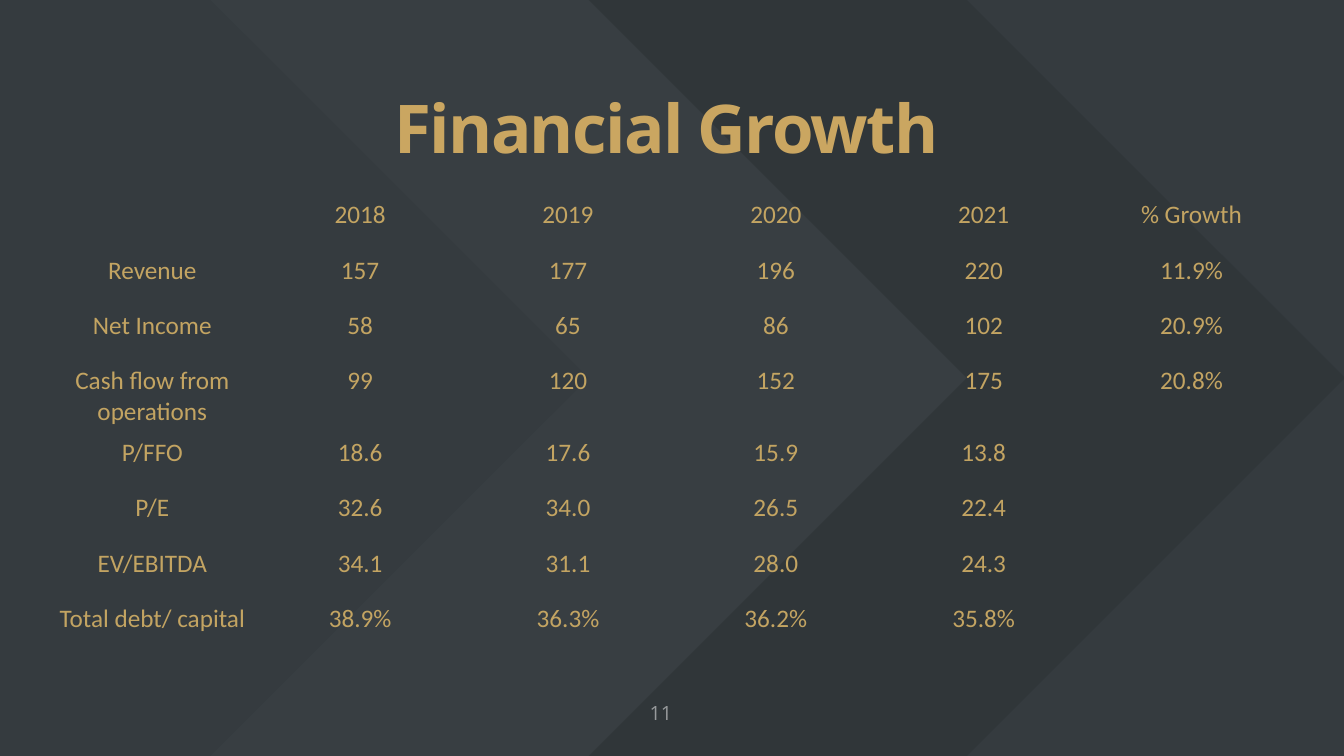
from lxml import etree
from pptx import Presentation
from pptx.dml.color import RGBColor
from pptx.enum.shapes import MSO_SHAPE
from pptx.enum.text import MSO_ANCHOR, PP_ALIGN
from pptx.oxml.ns import qn
from pptx.util import Inches, Pt

CHEVRON = MSO_SHAPE.CHEVRON
MIDDLE = MSO_ANCHOR.MIDDLE
CENTER = PP_ALIGN.CENTER
NO_STYLE_NO_GRID = "{2D5ABB26-0587-4C30-8999-92F81FD0307C}"

COLORS = {
    "background": "353B3F",
    "light chevron": "545E64",
    "dark chevron": "262B2E",
    "title": "CAA661",
    "table": "C3A462",
    "page number": "FFFFFF",
}

TITLE = "Financial Growth"
PAGE_NUMBER = "11"
FINANCIALS = [
    ("", "2018", "2019", "2020", "2021", "% Growth"),
    ("Revenue", "157", "177", "196", "220", "11.9%"),
    ("Net Income", "58", "65", "86", "102", "20.9%"),
    ("Cash flow from operations", "99", "120", "152", "175", "20.8%"),
    ("P/FFO", "18.6", "17.6", "15.9", "13.8", ""),
    ("P/E", "32.6", "34.0", "26.5", "22.4", ""),
    ("EV/EBITDA", "34.1", "31.1", "28.0", "24.3", ""),
    ("Total debt/ capital", "38.9%", "36.3%", "36.2%", "35.8%", ""),
]
# Left edge, colour name, opacity in percent
CHEVRONS = [(2.09, "light chevron", 10), (5.84, "dark chevron", 30)]
CHEVRON_SIZE = 7.5
TABLE_LEFT, TABLE_TOP, TABLE_WIDTH = 0.48, 1.93, 12.37
ROW_HEIGHT, TALL_ROW_HEIGHT, TALL_ROW = 0.55, 0.71, 3


def set_opacity(fill, percent):
    color = fill._xPr.find(qn("a:solidFill"))[0]
    etree.SubElement(color, qn("a:alpha"), val=str(percent * 1000))


def style_paragraph(paragraph, font_name, size, color_name, bold=False):
    paragraph.alignment = CENTER
    font = paragraph.font
    font.name, font.size, font.bold = font_name, Pt(size), bold
    font.color.rgb = RGBColor.from_string(COLORS[color_name])


def add_label(slide, text, left, top, width, height, size, color_name, bold=False):
    box = slide.shapes.add_textbox(Inches(left), Inches(top), Inches(width), Inches(height))
    frame = box.text_frame
    frame.word_wrap = True
    frame.vertical_anchor = MIDDLE
    paragraph = frame.paragraphs[0]
    paragraph.text = text
    style_paragraph(paragraph, "Open Sans", size, color_name, bold)
    return paragraph


def main():
    presentation = Presentation()
    presentation.slide_width, presentation.slide_height = Inches(13.33), Inches(7.5)
    slide = presentation.slides.add_slide(presentation.slide_layouts[6])

    # Background and chevrons
    background = slide.background.fill
    background.solid()
    background.fore_color.rgb = RGBColor.from_string(COLORS["background"])
    for left, color_name, opacity in CHEVRONS:
        chevron = slide.shapes.add_shape(
            CHEVRON, Inches(left), 0, Inches(CHEVRON_SIZE), Inches(CHEVRON_SIZE))
        chevron.shadow.inherit = False
        chevron.line.fill.background()
        chevron.fill.solid()
        chevron.fill.fore_color.rgb = RGBColor.from_string(COLORS[color_name])
        set_opacity(chevron.fill, opacity)

    # Title
    title = add_label(slide, TITLE, 0.72, 0.55, 11.78, 1.53, 48, "title", bold=True)
    title.line_spacing = 0.85
    title.runs[0].font._element.set("spc", "-120")

    # Financial table
    row_count, column_count = len(FINANCIALS), len(FINANCIALS[0])
    table_height = ROW_HEIGHT * (row_count - 1) + TALL_ROW_HEIGHT
    table = slide.shapes.add_table(
        row_count, column_count, Inches(TABLE_LEFT), Inches(TABLE_TOP),
        Inches(TABLE_WIDTH), Inches(table_height)).table
    table._tbl.tblPr.find(qn("a:tableStyleId")).text = NO_STYLE_NO_GRID
    table.first_row = table.horz_banding = False
    for row_index, values in enumerate(FINANCIALS):
        height = TALL_ROW_HEIGHT if row_index == TALL_ROW else ROW_HEIGHT
        table.rows[row_index].height = Inches(height)
        for column_index, value in enumerate(values):
            cell = table.cell(row_index, column_index)
            cell.fill.background()
            paragraph = cell.text_frame.paragraphs[0]
            paragraph.text = value
            style_paragraph(paragraph, "Calibri", 18, "table")

    # Page number
    page_number = add_label(slide, PAGE_NUMBER, 5.85, 6.87, 1.41, 0.39, 14, "page number")
    set_opacity(page_number.font.fill, 50)

    presentation.save("out.pptx")


if __name__ == "__main__":
    main()
